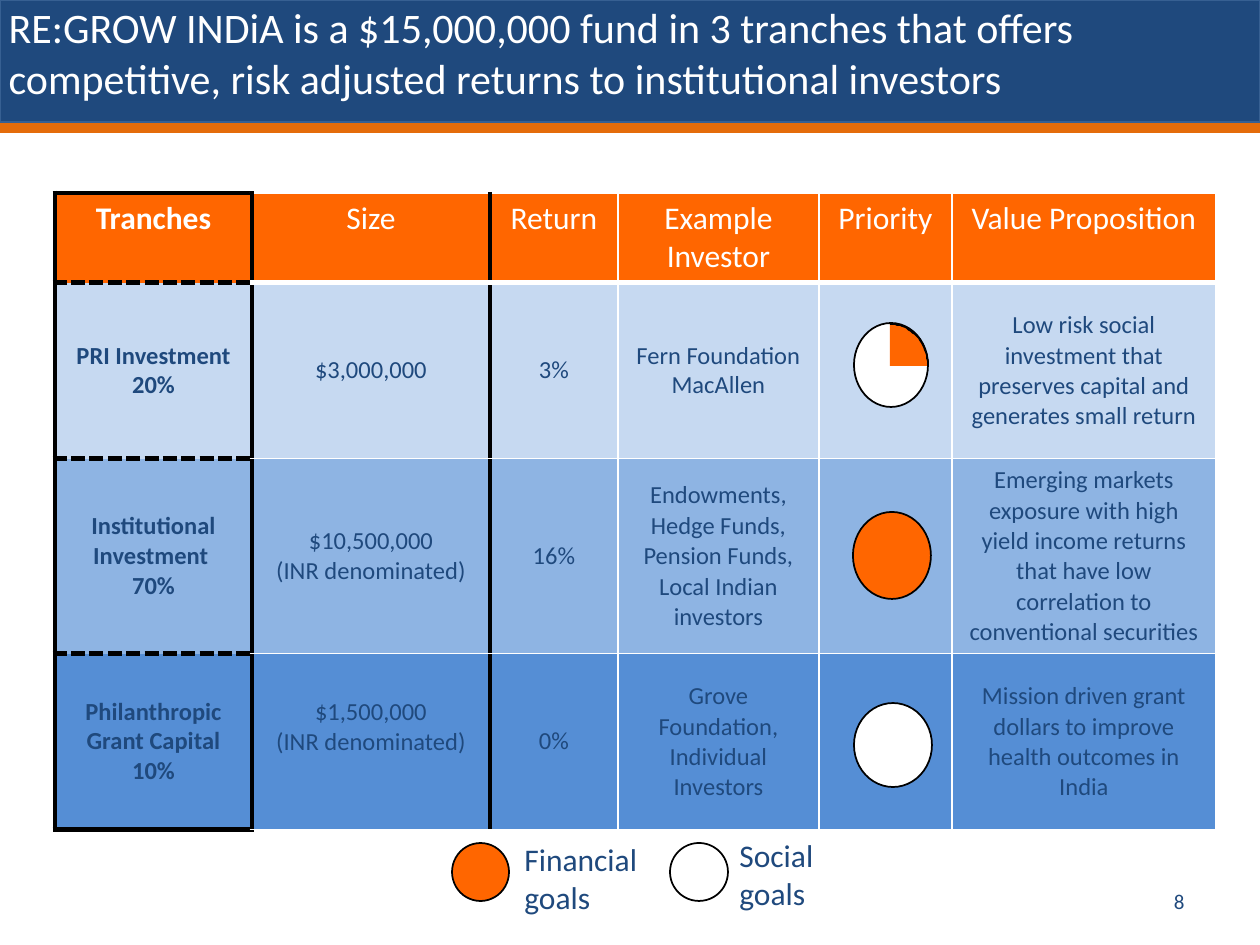
from math import cos, pi, sin

from lxml.etree import SubElement
from pptx import Presentation
from pptx.dml.color import RGBColor
from pptx.enum.shapes import MSO_SHAPE as SHAPE
from pptx.enum.text import MSO_ANCHOR as ANCHOR, MSO_AUTO_SIZE as AUTOSIZE, PP_ALIGN as ALIGN
from pptx.oxml.ns import qn
from pptx.util import Emu, Pt

SCALE = 914400 / 126  # EMU in one px
NAVY = RGBColor(0x1F, 0x49, 0x7D)
STEEL = RGBColor(0x37, 0x60, 0x92)
AMBER = RGBColor(0xE4, 0x6C, 0x0A)
ORANGE = RGBColor(0xFF, 0x66, 0x00)
WHITE = RGBColor(0xFF, 0xFF, 0xFF)
BLACK = RGBColor(0x00, 0x00, 0x00)
PALE = RGBColor(0xC6, 0xD9, 0xF1)
SKY = RGBColor(0x8E, 0xB4, 0xE3)
BLUE = RGBColor(0x55, 0x8E, 0xD5)


def add_shape(kind, box, fill, line, width):
    sp = slide.shapes.add_shape(kind, *[Emu(round(n * SCALE)) for n in box])
    sp.shadow.inherit = False
    sp.fill.solid()
    sp.fill.fore_color.rgb = fill
    sp.line.color.rgb = line
    sp.line.width = Pt(width)
    return sp


def write(tf, text, size, color, align=ALIGN.LEFT, bold=False, spacing=None):
    """Fill a text frame with one paragraph for each line of text."""
    tf.word_wrap = True
    for i, line in enumerate(text.split("\n")):
        p = tf.paragraphs[0] if i == 0 else tf.add_paragraph()
        p.alignment = align
        p.line_spacing = spacing
        r = p.add_run()
        r.text = line
        r.font.name = "Calibri"
        r.font.size = Pt(size)
        r.font.bold = bold
        r.font.color.rgb = color


prs = Presentation()
prs.slide_width = Emu(round(1260 * SCALE))
prs.slide_height = Emu(round(945 * SCALE))
slide = prs.slides.add_slide(prs.slide_layouts[5])

# Header
add_shape(SHAPE.RECTANGLE, (0, 0, 1260, 122), NAVY, STEEL, 0.75)
add_shape(SHAPE.RECTANGLE, (0, 125, 1260, 6), AMBER, AMBER, 2)
title = slide.shapes.title
title.left, title.top, title.width, title.height = [
    Emu(round(n * SCALE)) for n in (-4, 25, 1221, 84)]
slide.shapes._spTree.append(title._element)  # in front of the header bar
tf = title.text_frame
tf.auto_size = AUTOSIZE.NONE
tf.vertical_anchor = ANCHOR.BOTTOM
write(tf, "RE:GROW INDiA is a $15,000,000 fund in 3 tranches that offers "
      "competitive, risk adjusted returns to institutional investors", 24, WHITE)

# Table of tranches
rows = [
    ["Tranches", "Size", "Return", "Example Investor", "Priority", "Value Proposition"],
    ["PRI Investment\n20%", "$3,000,000", "3%", "Fern Foundation\nMacAllen", "",
     "Low risk social investment that preserves capital and generates small return"],
    ["Institutional Investment \n70%", "$10,500,000\n(INR denominated)", "16%",
     "Endowments, Hedge Funds, Pension Funds, Local Indian investors", "",
     "Emerging markets exposure with high yield income returns that have low "
     "correlation to conventional securities"],
    ["Philanthropic Grant Capital\n10%", "$1,500,000\n(INR denominated)", "0%",
     "Grove Foundation, Individual Investors", "",
     "Mission driven grant dollars to improve health outcomes in India"],
]
col_widths = [197, 238, 128, 201, 133, 264]
row_heights = [88, 176, 192, 176]
row_fills = [ORANGE, PALE, SKY, BLUE]
frame = slide.shapes.add_table(len(rows), len(col_widths), *[
    Emu(round(n * SCALE)) for n in (55, 193, sum(col_widths), sum(row_heights))])
table = frame.table
table.horz_banding = False
for col, width in zip(table.columns, col_widths):
    col.width = Emu(round(width * SCALE))
for row, height in zip(table.rows, row_heights):
    row.height = Emu(round(height * SCALE))

for i, texts in enumerate(rows):
    for j, text in enumerate(texts):
        cell = table.cell(i, j)
        header = i == 0
        cell.vertical_anchor = ANCHOR.TOP if header else ANCHOR.MIDDLE
        cell.fill.solid()
        cell.fill.fore_color.rgb = row_fills[i]
        if text:
            loose = not header and (j == 5 or (j == 3 and i > 1))
            write(cell.text_frame, text, 18 if header else 14, WHITE if header else NAVY,
                  ALIGN.CENTER, j == 0, 1.02 if loose else None)

        # Black rules frame the first two columns, white ones the rest
        tc_pr = cell._tc.get_or_add_tcPr()
        edges = [("a:lnL", j, True), ("a:lnR", j + 1, True),
                 ("a:lnT", i, False), ("a:lnB", i + 1, False)]
        for n, (tag, edge, vertical) in enumerate(edges):
            black = edge <= 2 if vertical else j == 0
            thick = black or (not vertical and edge == 1)
            ln = SubElement(tc_pr, qn(tag), w=str(Pt(3 if thick else 1)))
            tc_pr.insert(n, ln)
            color = SubElement(SubElement(ln, qn("a:solidFill")), qn("a:srgbClr"))
            color.set("val", str(BLACK if black else WHITE))
            dashed = not vertical and black and 0 < edge < len(rows)
            SubElement(ln, qn("a:prstDash"), val="sysDash" if dashed else "solid")
table.cell(3, 1).margin_bottom = Emu(round(36 * SCALE))

# Priority marks and legend dots
for box, fill in [((854, 703, 78, 84), WHITE), ((853, 512, 78, 87), ORANGE),
                  ((854, 323, 74, 84), WHITE),
                  ((452, 843, 57, 58), ORANGE), ((670, 843, 58, 58), WHITE)]:
    add_shape(SHAPE.OVAL, box, fill, BLACK, 1)

# Quarter slice: a fill without outline, then the outlined arc
cx, cy, rx, ry = 890, 366, 38, 42
arc = [(cx + rx * sin(k * pi / 48), cy - ry * cos(k * pi / 48)) for k in range(25)]
for points, closed in [([(cx, cy)] + arc, True), (arc, False)]:
    builder = slide.shapes.build_freeform(*points[0], scale=SCALE)
    builder.add_line_segments(points[1:], close=closed)
    sp = builder.convert_to_shape()
    sp.shadow.inherit = False
    if closed:
        sp.fill.solid()
        sp.fill.fore_color.rgb = ORANGE
        sp.line.fill.background()
    else:
        sp.fill.background()
        sp.line.color.rgb = BLACK
        sp.line.width = Pt(1)

# Legend labels and page number
for box, text, size, align, anchor in [
        ((512, 834, 194, 89), "Financial\ngoals", 18, ALIGN.LEFT, ANCHOR.TOP),
        ((727, 830, 169, 89), "Social\ngoals", 18, ALIGN.LEFT, ANCHOR.TOP),
        ((903, 876, 294, 50), "8", 12, ALIGN.RIGHT, ANCHOR.MIDDLE)]:
    tf = slide.shapes.add_textbox(*[Emu(round(n * SCALE)) for n in box]).text_frame
    tf.vertical_anchor = anchor
    write(tf, text, size, NAVY, align)

prs.save("out.pptx")
